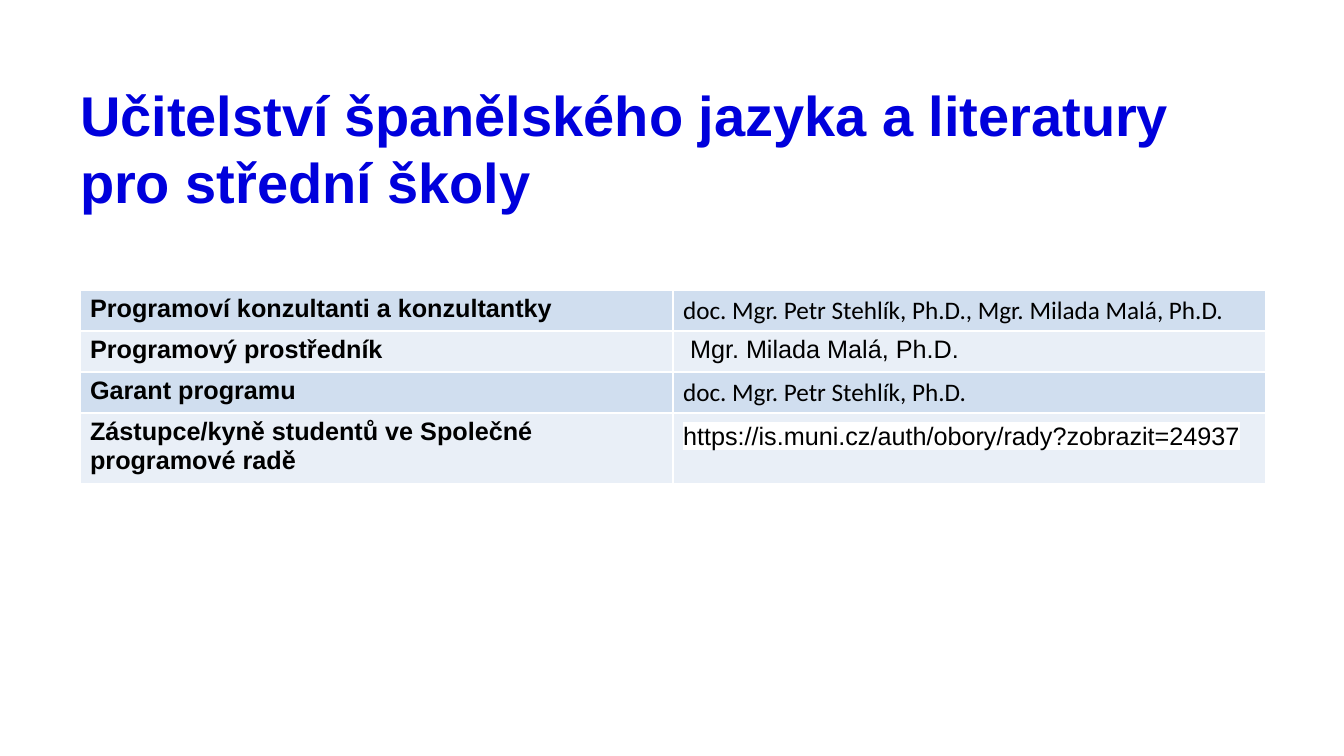
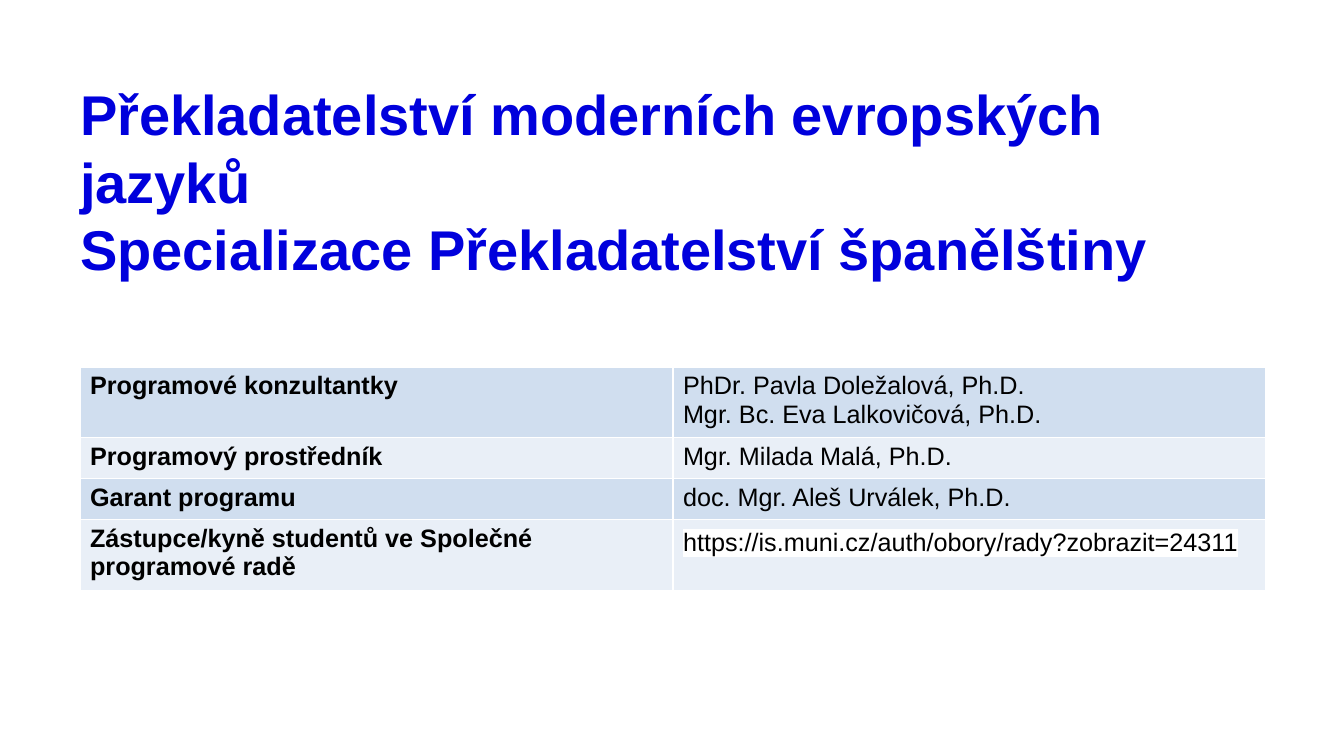
from lxml import etree
from pptx import Presentation
from pptx import util as u
from pptx.dml.color import RGBColor
from pptx.oxml import ns

# Content: title paragraphs, table top (px), rows of (label, lines, font, height px)
COUNCIL = "Zástupce/kyně studentů ve Společné programové radě"
COUNCIL_URL = "https://is.muni.cz/auth/obory/rady?zobrazit="
LOW, TALL = 41, 67
PROGRAMMES = [
    {
        "title": ["Učitelství španělského jazyka a literatury pro střední školy"],
        "title_height": 49,
        "table_top": 290,
        "rows": [
            ("Programoví konzultanti a konzultantky",
             ["doc. Mgr. Petr Stehlík, Ph.D., Mgr. Milada Malá, Ph.D."], "Calibri", LOW),
            ("Programový prostředník", [" Mgr. Milada Malá, Ph.D."], "Arial", LOW),
            ("Garant programu", ["doc. Mgr. Petr Stehlík, Ph.D."], "Calibri", LOW),
            (COUNCIL, [COUNCIL_URL + "24937"], "Arial", TALL),
        ],
    },
    {
        "title": ["Překladatelství moderních evropských jazyků",
                  "Specializace Překladatelství španělštiny"],
        "title_height": 204,
        "table_top": 367,
        "rows": [
            ("Programové konzultantky",
             ["PhDr. Pavla Doležalová, Ph.D.", "Mgr. Bc. Eva Lalkovičová, Ph.D."],
             "Arial", TALL),
            ("Programový prostředník", ["Mgr. Milada Malá, Ph.D."], "Arial", LOW),
            ("Garant programu", ["doc. Mgr. Aleš Urválek, Ph.D."], "Arial", LOW),
            (COUNCIL, [COUNCIL_URL + "24311"], "Arial", TALL),
        ],
    },
]

# Shared style
BLUE = RGBColor(0x00, 0x00, 0xDC)
BLACK = RGBColor(0x00, 0x00, 0x00)
WHITE = RGBColor(0xFF, 0xFF, 0xFF)
BANDS = [RGBColor(0xD0, 0xDE, 0xEF), RGBColor(0xE9, 0xEF, 0xF7)]
LEFT, TITLE_TOP, COLUMN = 80, 80, 593


def px(n):
    return u.Emu(round(n * 914400 / 100.8))


def style_runs(p, size, color, bold, font="Arial"):
    for r in p.runs:
        r.font.size, r.font.bold, r.font.name = u.Pt(size), bold, font
        r.font.color.rgb = color


def add_color(parent, tag, color):
    fill = etree.SubElement(parent, ns.qn(tag))
    etree.SubElement(fill, ns.qn("a:srgbClr"), val=str(color))
    return fill


def highlight(p):
    for r in p.runs:
        rpr = r.font._element
        mark = add_color(rpr, "a:highlight", WHITE)
        rpr.find(ns.qn("a:solidFill")).addnext(mark)


def add_borders(cell):
    tcpr = cell._tc.get_or_add_tcPr()
    for i, side in enumerate(("a:lnL", "a:lnR", "a:lnT", "a:lnB")):
        line = etree.Element(ns.qn(side), w=str(u.Pt(1)))
        add_color(line, "a:solidFill", WHITE)
        tcpr.insert(i, line)


def add_title(s, lines, height):
    tf = s.shapes.add_textbox(px(LEFT), px(TITLE_TOP), px(2 * COLUMN), px(height)).text_frame
    tf.word_wrap = True
    tf.margin_left = tf.margin_right = tf.margin_top = tf.margin_bottom = 0
    tf.text = "\n".join(lines)
    for p in tf.paragraphs:
        p.line_spacing = u.Pt(48)
        style_runs(p, 40, BLUE, True)


def fill_cell(cell, lines, band, bold, font):
    cell.fill.solid()
    cell.fill.fore_color.rgb = band
    add_borders(cell)
    cell.text_frame.text = "\n".join(lines)
    for p in cell.text_frame.paragraphs:
        style_runs(p, 18, BLACK, bold, font)
        if p.text.startswith("https:"):
            p.line_spacing = 1.15
            highlight(p)


def add_contacts(s, rows, top):
    height = sum(row[3] for row in rows)
    table = s.shapes.add_table(len(rows), 2, px(LEFT), px(top),
                               px(2 * COLUMN), px(height)).table
    table.first_row = table.horz_banding = False
    for column in table.columns:
        column.width = px(COLUMN)
    for i, (label, lines, font, row_height) in enumerate(rows):
        table.rows[i].height = px(row_height)
        band = BANDS[i % 2]
        fill_cell(table.cell(i, 0), [label], band, True, "Arial")
        fill_cell(table.cell(i, 1), lines, band, False, font)


def main():
    prs = Presentation()
    prs.slide_width, prs.slide_height = px(1344), px(756)
    for programme in PROGRAMMES:
        s = prs.slides.add_slide(prs.slide_layouts[6])
        add_title(s, programme["title"], programme["title_height"])
        add_contacts(s, programme["rows"], programme["table_top"])
    prs.save("out.pptx")


if __name__ == "__main__":
    main()
